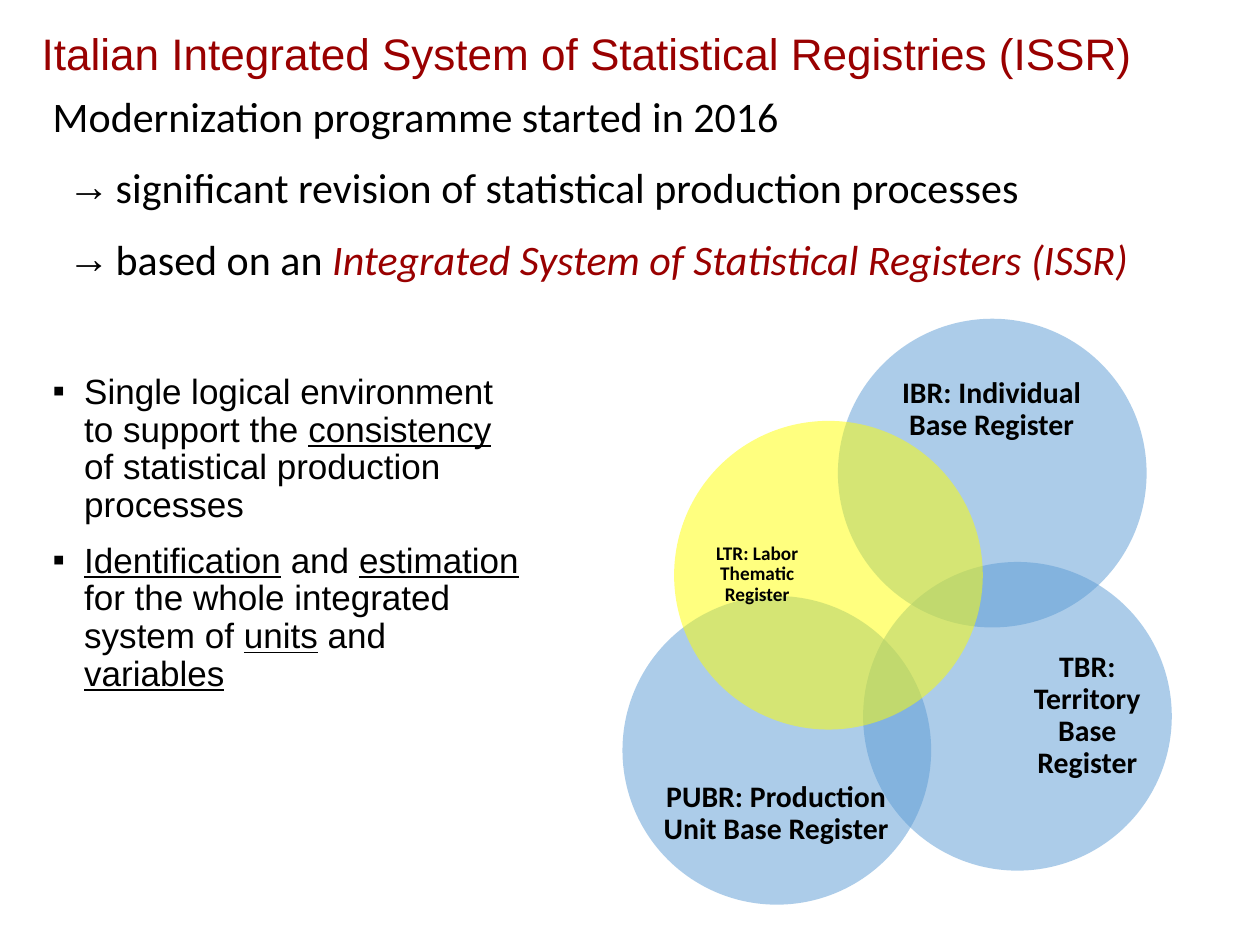
from lxml.etree import SubElement
from pptx import Presentation
from pptx.dml.color import RGBColor
from pptx.enum.shapes import MSO_SHAPE
from pptx.enum.text import MSO_ANCHOR, MSO_AUTO_SIZE, PP_ALIGN
from pptx.oxml.ns import qn
from pptx.util import Inches, Pt

COLORS = {"black": "000000", "red": "990000", "blue": "5B9BD5", "yellow": "FFFF00"}
DIAMETER = 2.45
WIDE, TALL = (1.88, 0.78), (0.94, 1.88)


def write(paragraph, text, font="Calibri", size=24, color="black",
          bold=False, italic=False, underline=False):
    run = paragraph.add_run()
    run.text = text
    run.font.name = font
    run.font.size = Pt(size)
    run.font.color.rgb = RGBColor.from_string(COLORS[color])
    run.font.bold = bold
    run.font.italic = italic
    run.font.underline = underline


class RegistrySlide:
    def __init__(self, slide):
        self.slide = slide
        self.line_spacing = 0.9

    def title(self, text, left, top, width, height):
        heading = self.slide.shapes.title
        heading.left, heading.top = Inches(left), Inches(top)
        heading.width, heading.height = Inches(width), Inches(height)
        frame = heading.text_frame
        frame.auto_size = MSO_AUTO_SIZE.NONE
        frame.vertical_anchor = MSO_ANCHOR.MIDDLE
        paragraph = frame.paragraphs[0]
        paragraph.alignment = PP_ALIGN.LEFT
        paragraph.line_spacing = self.line_spacing
        write(paragraph, text, font="Arial", size=25.2, color="red")

    def text_frame(self, left, top, width, height, wrap=True):
        box = self.slide.shapes.add_textbox(
            Inches(left), Inches(top), Inches(width), Inches(height))
        box.text_frame.word_wrap = wrap
        return box.text_frame

    def bullet(self, paragraph, mark, margin, indent):
        properties = paragraph._p.get_or_add_pPr()
        properties.set("marL", str(Inches(margin)))
        properties.set("indent", str(Inches(indent)))
        SubElement(properties, qn("a:buFont"), typeface="Arial")
        SubElement(properties, qn("a:buChar"), char=mark)

    def paragraphs(self, frame, items, gap, line_spacing=1.0, **style):
        for index, (marker, runs) in enumerate(items):
            paragraph = frame.add_paragraph() if index else frame.paragraphs[0]
            if marker:
                self.bullet(paragraph, *marker)
            paragraph.line_spacing = line_spacing
            paragraph.space_before = Pt(gap if index else 0)
            for text, changes in runs:
                write(paragraph, text, **style, **changes)

    def circle(self, left, top, color):
        disc = self.slide.shapes.add_shape(
            MSO_SHAPE.OVAL, Inches(left), Inches(top), Inches(DIAMETER), Inches(DIAMETER))
        disc.shadow.inherit = False
        disc.fill.solid()
        disc.fill.fore_color.rgb = RGBColor.from_string(COLORS[color])
        shade = disc._element.spPr.find(qn("a:solidFill"))[0]
        SubElement(shade, qn("a:alpha"), val="50000")
        disc.line.fill.background()

    def label(self, text, left, top, size, points):
        frame = self.text_frame(left, top, *size)
        frame.margin_left = frame.margin_right = 0
        frame.margin_top = frame.margin_bottom = 0
        frame.vertical_anchor = MSO_ANCHOR.MIDDLE
        paragraph = frame.paragraphs[0]
        paragraph.alignment = PP_ALIGN.CENTER
        paragraph.line_spacing = self.line_spacing
        write(paragraph, text, size=points, bold=True)


def main():
    deck = Presentation()
    deck.slide_width, deck.slide_height = Inches(10), Inches(7.5)
    page = RegistrySlide(deck.slides.add_slide(deck.slide_layouts[5]))
    page.title("Italian Integrated System of Statistical Registries (ISSR)",
               0.23, 0.09, 9.69, 0.71)

    square = ("▪", 0.25, -0.25)
    plain, underlined = {}, {"underline": True}
    goals = [
        (square, [("Single logical environment to support the ", plain),
                  ("consistency", underlined),
                  (" of statistical production processes", plain)]),
        (square, [("Identification", underlined), (" and ", plain),
                  ("estimation", underlined),
                  (" for the whole integrated system of ", plain),
                  ("units", underlined), (" and ", plain),
                  ("variables", underlined)]),
    ]
    page.paragraphs(page.text_frame(0.32, 2.92, 3.9, 3.26), goals, gap=10,
                    line_spacing=page.line_spacing, font="Arial", size=20)

    registers = [
        ("IBR: Individual Base Register", (6.65, 2.53), "blue", (6.93, 2.86), WIDE, 17),
        ("TBR: Territory Base Register", (6.85, 4.46), "blue", (8.16, 4.74), TALL, 17),
        ("PUBR: Production Unit Base Register", (4.94, 4.73), "blue", (5.22, 6.07), WIDE, 17),
        ("LTR: Labor Thematic Register", (5.35, 3.34), "yellow", (5.54, 3.62), TALL, 11),
    ]
    for name, circle_at, color, label_at, size, points in registers:
        page.circle(*circle_at, color)
        page.label(name, *label_at, size, points)

    arrow = ("→", 0.5, -0.38)
    programme = [
        (None, [("Modernization programme started in 2016", plain)]),
        (arrow, [("significant revision of statistical production processes", plain)]),
        (arrow, [("based on an ", plain),
                 ("Integrated System of Statistical Registers (ISSR)",
                  {"color": "red", "italic": True})]),
    ]
    page.paragraphs(page.text_frame(0.32, 0.67, 8.82, 1.73, wrap=False), programme, gap=12)
    deck.save("out.pptx")


if __name__ == "__main__":
    main()
